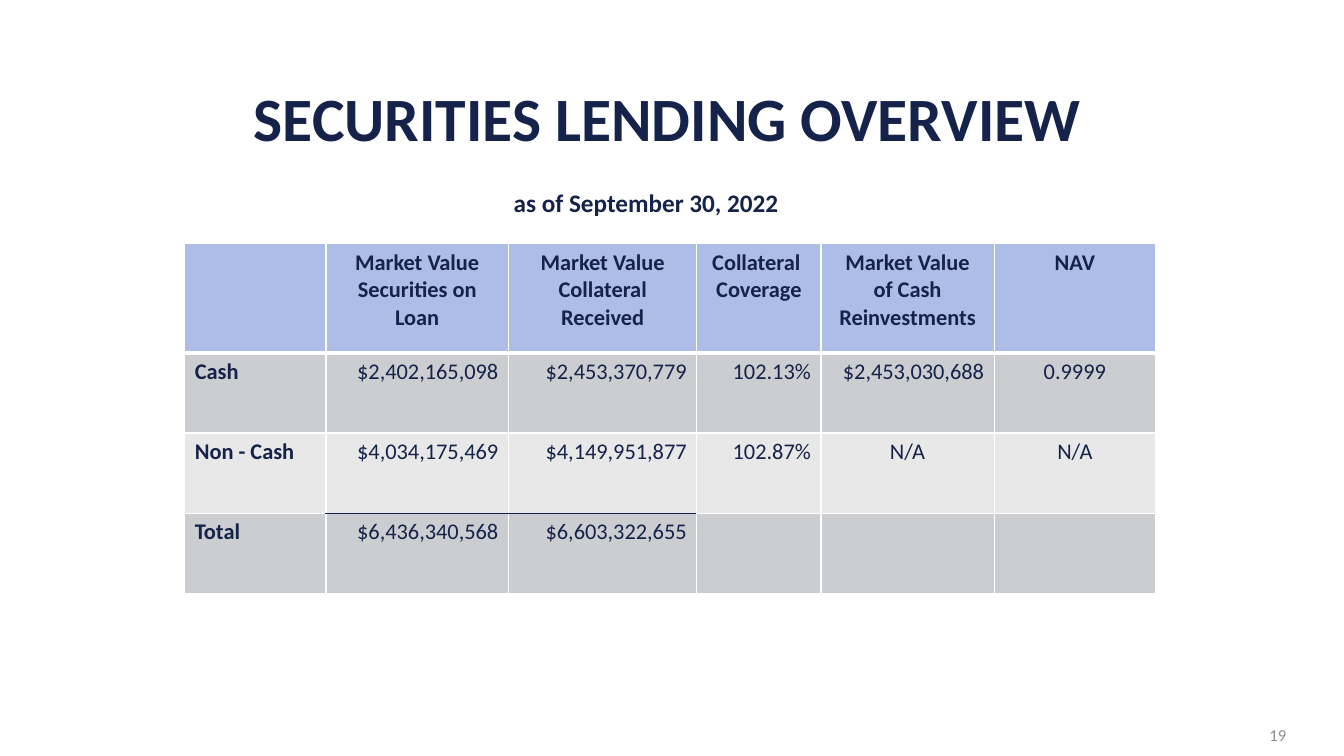
import pptx
import pptx.dml.color
import pptx.enum.text
import pptx.oxml.ns
import pptx.util
from lxml import etree

Pt = pptx.util.Pt
RGBColor = pptx.dml.color.RGBColor
PP_ALIGN = pptx.enum.text.PP_ALIGN
MSO_ANCHOR = pptx.enum.text.MSO_ANCHOR
qn = pptx.oxml.ns.qn

NAVY = RGBColor(0x15, 0x23, 0x4A)
GREY = RGBColor(0x8C, 0x8D, 0x96)
WHITE = RGBColor(0xFF, 0xFF, 0xFF)
HEADER_BLUE = RGBColor(0xAE, 0xBD, 0xE8)
BAND_DARK = RGBColor(0xCC, 0xCD, 0xD0)
BAND_LIGHT = RGBColor(0xE8, 0xE8, 0xE9)

LEFT, CENTER, RIGHT = PP_ALIGN.LEFT, PP_ALIGN.CENTER, PP_ALIGN.RIGHT

COL_WIDTHS = [100.8, 130.4, 134.6, 88.6, 123.8, 115.2]
ROW_HEIGHTS = [78, 57.2, 57.2, 57.2]
ROWS = [
    ["", "Market Value\nSecurities on Loan", "Market Value\nCollateral Received",
     "Collateral \nCoverage", "Market Value\nof Cash Reinvestments", "NAV"],
    ["Cash", "$2,402,165,098", "$2,453,370,779", "102.13%", "$2,453,030,688", "0.9999"],
    ["Non - Cash", "$4,034,175,469", "$4,149,951,877", "102.87%", "N/A", "N/A"],
    ["Total", "$6,436,340,568", "$6,603,322,655", "", "", ""],
]
TOTAL_ROW = len(ROWS) - 1
SUMMED_COLS = (1, 2)


class SlideBuilder:
    font = "Calibri"

    def __init__(self, prs):
        self.slide = prs.slides.add_slide(prs.slide_layouts[6])

    def set_text(self, tf, text, size, color=NAVY, bold=False, align=CENTER, spacing=None):
        tf.text = text
        for p in tf.paragraphs:
            p.alignment = align
            p.line_spacing = spacing
            for r in p.runs:
                r.font.name = self.font
                r.font.size = Pt(size)
                r.font.bold = bold
                r.font.color.rgb = color

    def text(self, x, y, w, h, text, size, anchor=MSO_ANCHOR.TOP, **style):
        tf = self.slide.shapes.add_textbox(Pt(x), Pt(y), Pt(w), Pt(h)).text_frame
        tf.word_wrap = True
        tf.vertical_anchor = anchor
        self.set_text(tf, text, size, **style)

    def border(self, cell, side, color, width):
        tcPr = cell._tc.get_or_add_tcPr()
        ln = etree.SubElement(tcPr, qn("a:ln" + side), w=str(Pt(width)))
        fill = etree.SubElement(ln, qn("a:solidFill"))
        etree.SubElement(fill, qn("a:srgbClr"), val=str(color))

    def cell(self, cell, text, fill, bold, align, top, bottom):
        self.set_text(cell.text_frame, text, 16, bold=bold, align=align)
        # Borders come before the fill in the cell properties
        for side, line in (("L", (WHITE, 1)), ("R", (WHITE, 1)), ("T", top), ("B", bottom)):
            self.border(cell, side, *line)
        cell.fill.solid()
        cell.fill.fore_color.rgb = fill

    def table(self, x, y, col_widths, row_heights, rows):
        table = self.slide.shapes.add_table(
            len(rows), len(col_widths), Pt(x), Pt(y),
            Pt(sum(col_widths)), Pt(sum(row_heights))).table
        for column, width in zip(table.columns, col_widths):
            column.width = Pt(width)
        for row, height in zip(table.rows, row_heights):
            row.height = Pt(height)

        def rule(below, j):
            """Line above row number `below` in column j."""
            if below == 1:
                return WHITE, 3
            if below == TOTAL_ROW and j in SUMMED_COLS:
                return NAVY, 1
            return WHITE, 1

        for i, values in enumerate(rows):
            fill = HEADER_BLUE if i == 0 else (BAND_LIGHT, BAND_DARK)[i % 2]
            for j, value in enumerate(values):
                if i == 0 or value == "N/A" or j == len(values) - 1:
                    align = CENTER
                else:
                    align = LEFT if j == 0 else RIGHT
                self.cell(table.cell(i, j), value, fill, i == 0 or j == 0, align,
                          rule(i, j), rule(i + 1, j))


def main():
    prs = pptx.Presentation()
    prs.slide_width, prs.slide_height = Pt(960), Pt(540)
    s = SlideBuilder(prs)

    # Heading and date
    s.text(150, 60, 654, 54, "SECURITIES LENDING OVERVIEW", 44,
           anchor=MSO_ANCHOR.MIDDLE, bold=True, spacing=0.9)
    s.text(356.4, 130.3, 210.2, 29, "as of September 30, 2022", 18, bold=True)

    # Lending figures
    s.table(132, 174.2, COL_WIDTHS, ROW_HEIGHTS, ROWS)

    # Page number
    s.text(710, 510.5, 216, 28.8, "19", 12, anchor=MSO_ANCHOR.MIDDLE,
           color=GREY, align=RIGHT)

    prs.save("out.pptx")


if __name__ == "__main__":
    main()
